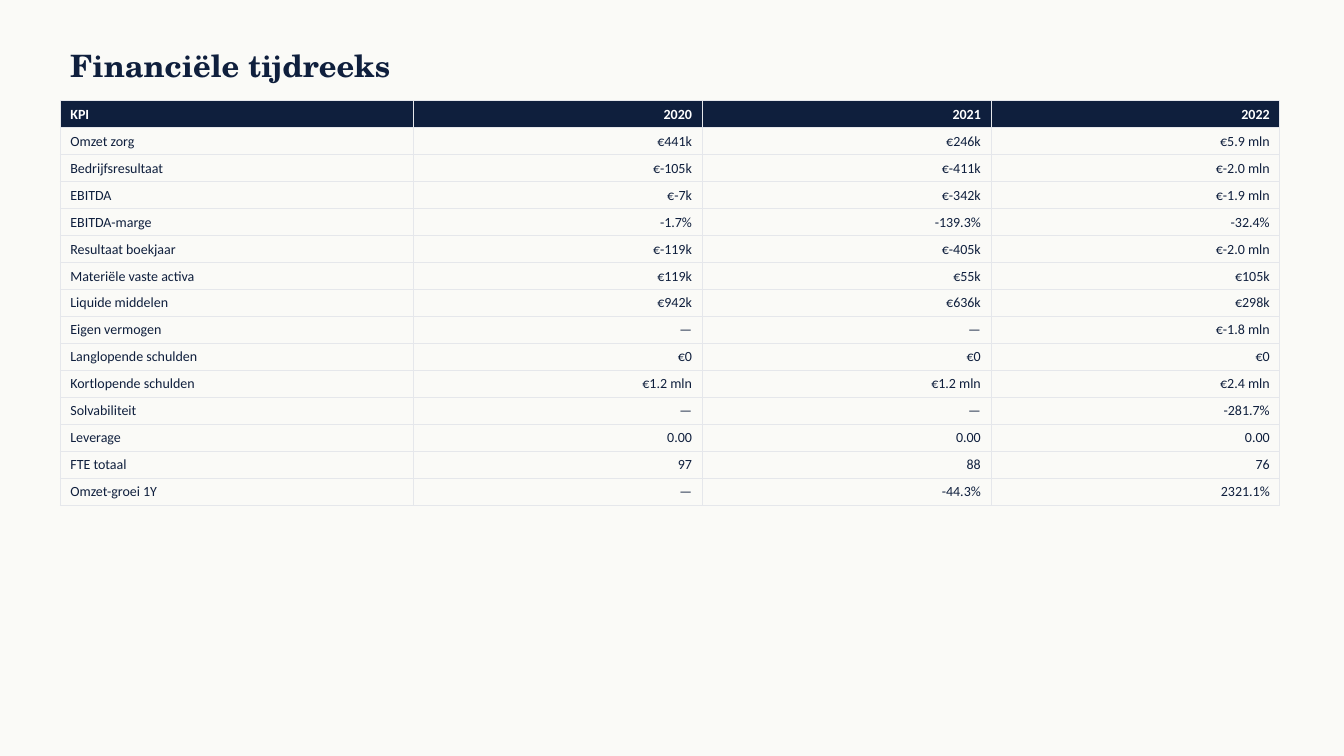
import pptx
import pptx.dml.color
import pptx.enum.text
import pptx.oxml
import pptx.oxml.ns
import pptx.util
from pptx.util import Cm

NAVY = "0F1F3D"
WHITE = "FFFFFF"
IVORY = "FAFAF7"
GRID = "E5E7EB"

LEFT = Cm(1.52)
ROW_HEIGHT = Cm(0.68)
COLUMN_WIDTHS = [Cm(8.89), Cm(7.28), Cm(7.28), Cm(7.28)]

FIGURES = [
    ("KPI", "2020", "2021", "2022"),
    ("Omzet zorg", "€441k", "€246k", "€5.9 mln"),
    ("Bedrijfsresultaat", "€-105k", "€-411k", "€-2.0 mln"),
    ("EBITDA", "€-7k", "€-342k", "€-1.9 mln"),
    ("EBITDA-marge", "-1.7%", "-139.3%", "-32.4%"),
    ("Resultaat boekjaar", "€-119k", "€-405k", "€-2.0 mln"),
    ("Materiële vaste activa", "€119k", "€55k", "€105k"),
    ("Liquide middelen", "€942k", "€636k", "€298k"),
    ("Eigen vermogen", "—", "—", "€-1.8 mln"),
    ("Langlopende schulden", "€0", "€0", "€0"),
    ("Kortlopende schulden", "€1.2 mln", "€1.2 mln", "€2.4 mln"),
    ("Solvabiliteit", "—", "—", "-281.7%"),
    ("Leverage", "0.00", "0.00", "0.00"),
    ("FTE totaal", "97", "88", "76"),
    ("Omzet-groei 1Y", "—", "-44.3%", "2321.1%"),
]


def paint(color_holder, color):
    """Set a solid fill or a font to a hex colour."""
    if hasattr(color_holder, "solid"):
        color_holder.solid()
        color_holder = color_holder.fore_color
    else:
        color_holder = color_holder.color
    color_holder.rgb = pptx.dml.color.RGBColor.from_string(color)


def add_run(paragraph, text, font_name, size, color, bold):
    run = paragraph.add_run()
    run.text = text
    run.font.name = font_name
    run.font.size = pptx.util.Pt(size)
    run.font.bold = bold
    paint(run.font, color)


def add_title(slide, text):
    box = slide.shapes.add_textbox(LEFT, Cm(1.02), Cm(30.48), Cm(1.27))
    frame = box.text_frame
    frame.word_wrap = True
    frame.vertical_anchor = pptx.enum.text.MSO_ANCHOR.MIDDLE
    add_run(frame.paragraphs[0], text, "TeX Gyre Schola", 22, NAVY, True)


def add_cell_borders(cell, color, width):
    properties = cell._tc.get_or_add_tcPr()
    for side in ("lnL", "lnR", "lnT", "lnB"):
        properties.append(pptx.oxml.parse_xml(
            f'<a:{side} {pptx.oxml.ns.nsdecls("a")} w="{pptx.util.Pt(width)}">'
            f'<a:solidFill><a:srgbClr val="{color}"/></a:solidFill></a:{side}>'
        ))


def fill_cell(cell, text, is_header, is_number):
    add_cell_borders(cell, GRID, 0.5)
    if is_header:
        paint(cell.fill, NAVY)
    else:
        cell.fill.background()
    paragraph = cell.text_frame.paragraphs[0]
    if is_number:
        paragraph.alignment = pptx.enum.text.PP_ALIGN.RIGHT
    add_run(paragraph, text, "Calibri", 10, WHITE if is_header else NAVY, is_header)


def add_figures_table(slide, figures):
    frame = slide.shapes.add_table(
        len(figures), len(COLUMN_WIDTHS), LEFT, Cm(2.54),
        sum(COLUMN_WIDTHS), ROW_HEIGHT * len(figures),
    )
    table = frame.table
    table.horz_banding = False
    for column, width in zip(table.columns, COLUMN_WIDTHS):
        column.width = width
    for row_index, values in enumerate(figures):
        for column_index, text in enumerate(values):
            cell = table.cell(row_index, column_index)
            fill_cell(cell, text, row_index == 0, column_index > 0)


def main():
    presentation = pptx.Presentation()
    presentation.slide_width = Cm(33.87)
    presentation.slide_height = Cm(19.05)
    slide = presentation.slides.add_slide(presentation.slide_layouts[6])
    paint(slide.background.fill, IVORY)
    add_title(slide, "Financiële tijdreeks")
    add_figures_table(slide, FIGURES)
    presentation.save("out.pptx")


if __name__ == "__main__":
    main()
